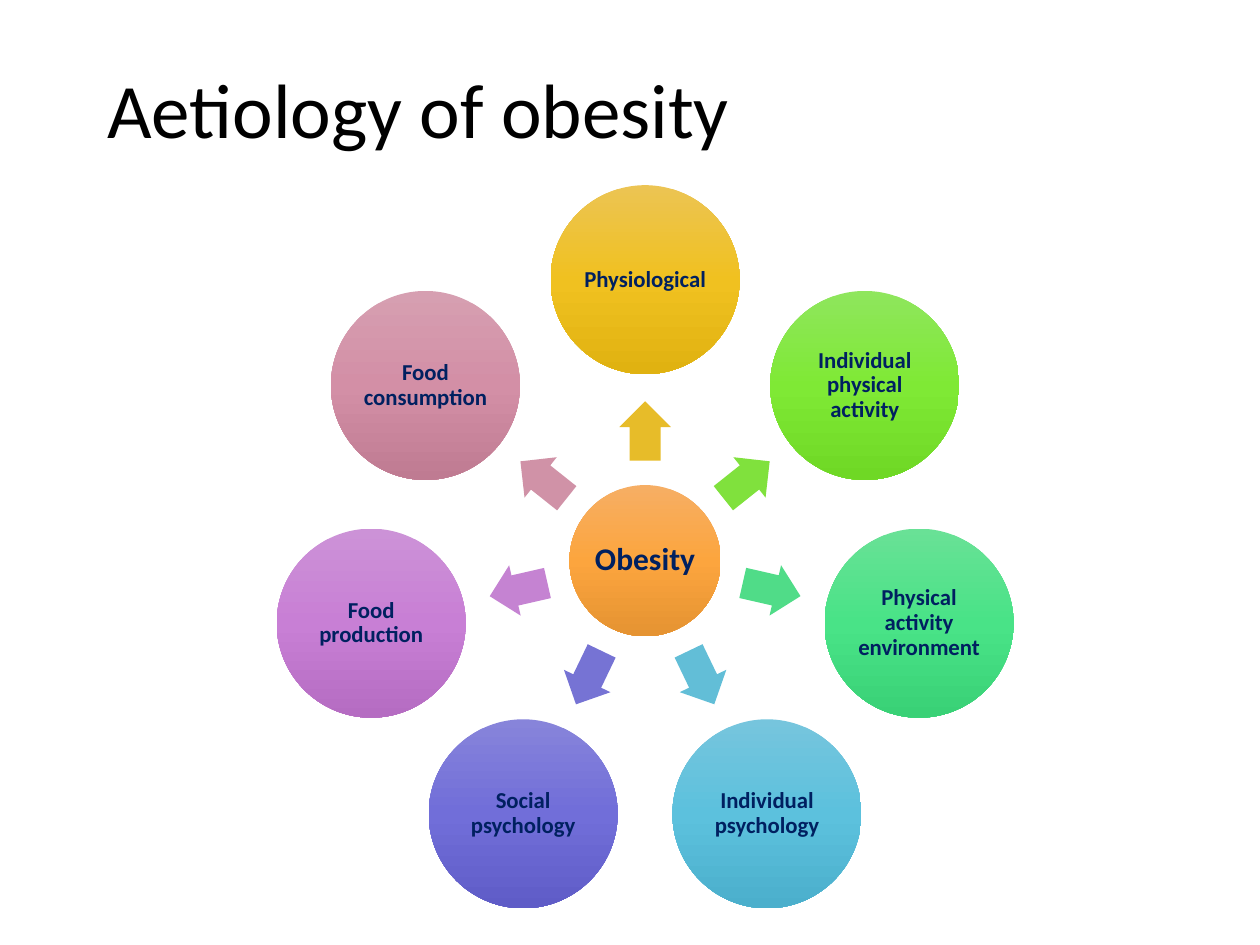
"""Build a slide with a radial diagram of the causes of obesity."""
from copy import deepcopy
from math import cos, radians, sin

from pptx import Presentation
from pptx.dml.color import RGBColor as Rgb
from pptx.enum.shapes import MSO_SHAPE as Shape
from pptx.enum.text import MSO_ANCHOR as Anchor, PP_ALIGN as Align
from pptx.oxml.ns import qn
from pptx.util import Inches, Pt

COLORS = {
    "title": "000000",
    "label": "002060",
    "hub": ("F6AE64", "FCA53E", "E59332"),
    "gold": ("ECC453", "F0C120", "E0B211"),
    "lime": ("8FE65D", "7FE935", "6FD825"),
    "green": ("69E196", "49E387", "39D176"),
    "cyan": ("76C5DD", "5CC1DD", "4BAFCC"),
    "indigo": ("8784DA", "716ED9", "5F5CC7"),
    "violet": ("CC92D7", "C87FD5", "B56CC2"),
    "rose": ("D69FB1", "D38FA6", "BF7B92"),
}
CAUSES = [
    ("Physiological", "gold", "E7BC29"),
    ("Individual physical activity", "lime", "80E13D"),
    ("Physical activity environment", "green", "50DC88"),
    ("Individual psychology", "cyan", "62BED7"),
    ("Social psychology", "indigo", "7673D4"),
    ("Food production", "violet", "C583D2"),
    ("Food consumption", "rose", "D092A7"),
]
CENTER_X, CENTER_Y = 5.12, 4.45
CIRCLE_ORBIT, ARROW_ORBIT = 2.23, 1.03
HUB_SIZE, CIRCLE_SIZE = 1.2, 1.5
ARROW_LENGTH, ARROW_WIDTH = 0.47, 0.41


def add_text(para, text, size, color, bold=False):
    """Add one formatted run to a paragraph with tight line spacing."""
    para.line_spacing = 0.9
    span = para.add_run()
    span.text = text
    span.font.name = "Calibri"
    span.font.size = Pt(size)
    span.font.bold = bold
    span.font.color.rgb = Rgb.from_string(color)


def add_title(page, text):
    """Place and fill the title placeholder."""
    title = page.shapes.title
    title.left, title.top = Inches(0.75), Inches(0.03)
    title.width, title.height = Inches(8.5), Inches(1.75)
    title.text_frame.vertical_anchor = Anchor.MIDDLE
    para = title.text_frame.paragraphs[0]
    para.alignment = Align.LEFT
    add_text(para, text, 44, COLORS["title"])


def add_centered(diagram, kind, x, y, width, height):
    """Add a plain preset shape around a centre point."""
    shape = diagram.shapes.add_shape(
        kind, Inches(x - width / 2), Inches(y - height / 2),
        Inches(width), Inches(height))
    shape.shadow.inherit = False
    shape.line.fill.background()
    return shape


def fill_gradient(shape, colors):
    """Fill a shape from top to bottom with three evenly spaced colours."""
    fill = shape.fill
    fill.gradient()
    fill.gradient_angle = 270
    stops = shape._element.spPr.find(qn("a:gradFill")).find(qn("a:gsLst"))
    stops.insert(1, deepcopy(stops[0]))
    for index, (stop, color) in enumerate(zip(fill.gradient_stops, colors)):
        stop.position = index / 2
        stop.color.rgb = Rgb.from_string(color)


def add_circle(diagram, x, y, size, text, font_size, colors):
    """Add a gradient circle with a bold centred label."""
    circle = add_centered(diagram, Shape.OVAL, x, y, size, size)
    fill_gradient(circle, colors)
    box = circle.text_frame
    box.word_wrap = True
    box.vertical_anchor = Anchor.MIDDLE
    box.margin_left = box.margin_right = 0
    box.margin_top = box.margin_bottom = 0
    para = box.paragraphs[0]
    para.alignment = Align.CENTER
    add_text(para, text, font_size, COLORS["label"], bold=True)


def add_arrow(diagram, x, y, rotation, color):
    """Add a block arrow pointing outward."""
    arrow = add_centered(diagram, Shape.RIGHT_ARROW, x, y,
                         ARROW_LENGTH, ARROW_WIDTH)
    arrow.adjustments[0], arrow.adjustments[1] = 0.6, 0.5
    arrow.rotation = rotation
    arrow.fill.solid()
    arrow.fill.fore_color.rgb = Rgb.from_string(color)


def orbit_point(radius, angle):
    """Return the point at an angle in degrees around the hub."""
    turn = radians(angle)
    return CENTER_X + radius * cos(turn), CENTER_Y + radius * sin(turn)


def add_diagram(page):
    """Add the hub with its causes spaced evenly around it."""
    diagram = page.shapes.add_group_shape()
    add_circle(diagram, CENTER_X, CENTER_Y, HUB_SIZE, "Obesity", 18,
               COLORS["hub"])
    for index, (text, shade, arrow_color) in enumerate(CAUSES):
        angle = (270 + index * 360 / len(CAUSES)) % 360
        add_arrow(diagram, *orbit_point(ARROW_ORBIT, angle), angle, arrow_color)
        add_circle(diagram, *orbit_point(CIRCLE_ORBIT, angle), CIRCLE_SIZE,
                   text, 13, COLORS[shade])


def main():
    """Create and save the deck."""
    deck = Presentation()
    deck.slide_width, deck.slide_height = Inches(10), Inches(7.5)
    page = deck.slides.add_slide(deck.slide_layouts[5])
    add_title(page, "Aetiology of obesity")
    add_diagram(page)
    deck.save("out.pptx")


if __name__ == "__main__":
    main()
